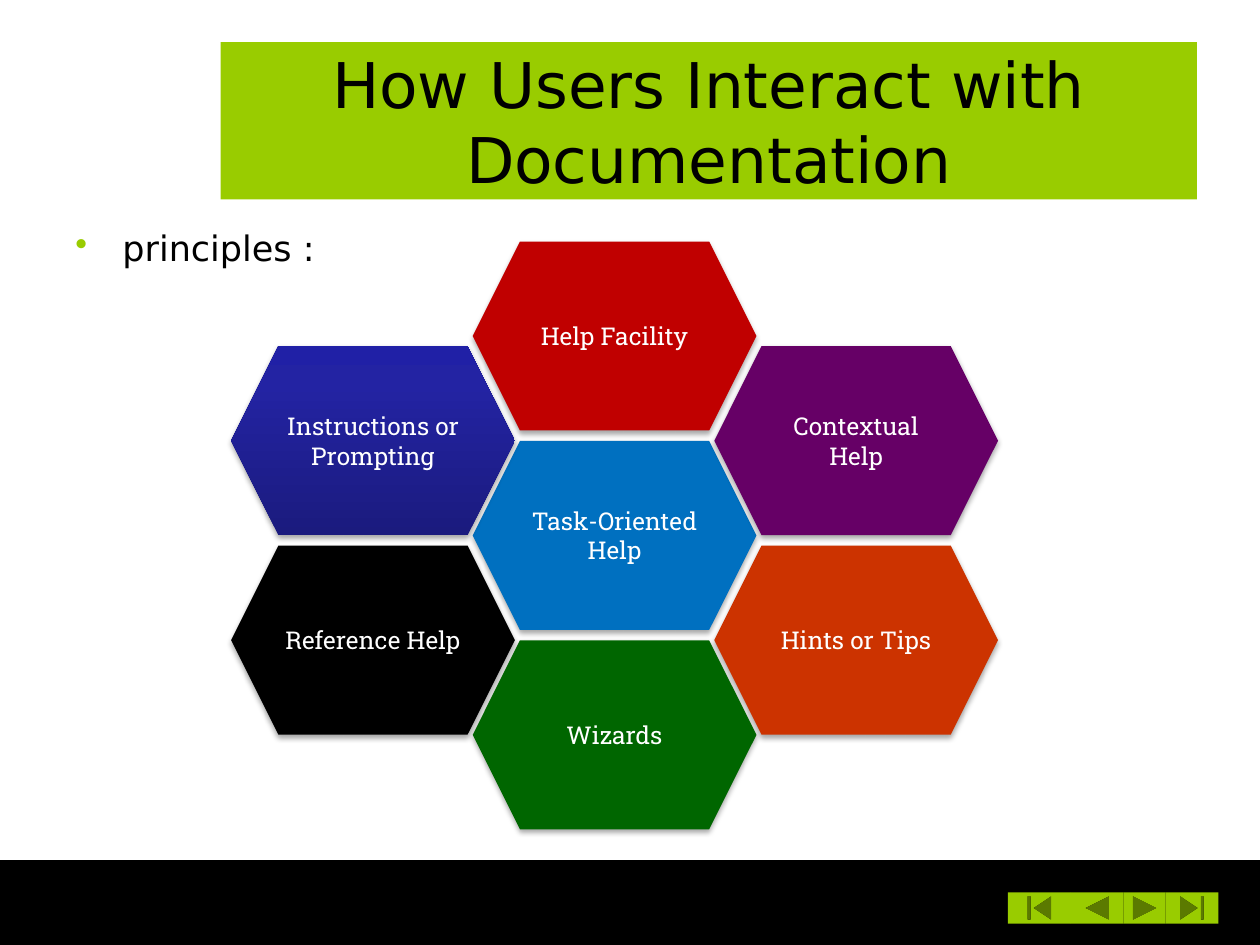
from lxml import etree
from pptx import Presentation, oxml
from pptx.dml.color import RGBColor
from pptx.enum import shapes, text
from pptx.oxml import ns
from pptx.util import Cm, Pt

BLACK = RGBColor(0x00, 0x00, 0x00)
WHITE = RGBColor(0xFF, 0xFF, 0xFF)
LIME = RGBColor(0x99, 0xCC, 0x00)
BLUE = RGBColor(0x00, 0x70, 0xC0)
ORANGE = RGBColor(0xCC, 0x33, 0x00)
PURPLE = RGBColor(0x66, 0x00, 0x66)
GREEN = RGBColor(0x00, 0x66, 0x00)
RED = RGBColor(0xC0, 0x00, 0x00)
INDIGO_STOPS = [
    (0, RGBColor(0x1B, 0x1B, 0x7E)),
    (80, RGBColor(0x23, 0x23, 0xA3)),
    (100, RGBColor(0x20, 0x20, 0xA6)),
]
SHAPE = shapes.MSO_SHAPE

deck = Presentation()
deck.slide_width, deck.slide_height = Cm(25.4), Cm(19.05)
page = deck.slides.add_slide(deck.slide_layouts[6])


def add_block(kind, left, top, width, height, color):
    block = page.shapes.add_shape(kind, Cm(left), Cm(top), Cm(width), Cm(height))
    block.shadow.inherit = False
    block.fill.solid()
    block.fill.fore_color.rgb = color
    block.line.fill.background()
    return block


def write(box, words, font, size, color, align):
    frame = box.text_frame
    frame.word_wrap = True
    para = frame.paragraphs[0]
    para.text = words
    para.alignment = align
    span = para.runs[0]
    span.font.name = font
    span.font.size = Pt(size)
    span.font.color.rgb = color
    return para


# Footer bar with navigation buttons
footer = add_block(SHAPE.RECTANGLE, 0, 17.35, 25.4, 1.7, BLACK)
footer.line.color.rgb = BLACK
footer.line.width = Pt(0.75)
button_left = 20.32
for kind, width in [
    (SHAPE.ACTION_BUTTON_BEGINNING, 1.27),
    (SHAPE.ACTION_BUTTON_BACK_OR_PREVIOUS, 1.06),
    (SHAPE.ACTION_BUTTON_FORWARD_OR_NEXT, 0.85),
    (SHAPE.ACTION_BUTTON_END, 1.06),
]:
    add_block(kind, button_left, 17.99, width, 0.63, LIME)
    button_left += width

# Title and bullet
title = add_block(SHAPE.RECTANGLE, 4.45, 0.85, 19.68, 3.17, LIME)
title.text_frame.vertical_anchor = text.MSO_ANCHOR.MIDDLE
write(title, "How Users Interact with Documentation", "DejaVu Sans", 36, BLACK,
      text.PP_ALIGN.CENTER)

body = page.shapes.add_textbox(Cm(1.27), Cm(4.45), Cm(22.86), Cm(12.57))
para = write(body, "principles :", "DejaVu Sans", 20, BLACK, text.PP_ALIGN.LEFT)
properties = para._p.get_or_add_pPr()
properties.set("marL", str(Cm(0.95)))
properties.set("indent", str(-Cm(0.95)))
bullet_color = etree.SubElement(properties, ns.qn("a:buClr"))
etree.SubElement(bullet_color, ns.qn("a:srgbClr"), val=str(LIME))
etree.SubElement(properties, ns.qn("a:buChar"), char="•")

# Honeycomb: the middle column holds three cells, the side columns two
FIRST_LEFT, COLUMN_STEP, ROW_STEP = 4.66, 4.87, 4.02
COLUMN_TOPS = [6.98, 4.87, 6.98]
SHADOW = (
    f'<a:effectLst {ns.nsdecls("a")}>'
    '<a:outerShdw blurRad="40000" dist="23000" dir="5400000" rotWithShape="0">'
    '<a:srgbClr val="000000"><a:alpha val="35000"/></a:srgbClr>'
    '</a:outerShdw></a:effectLst>'
)
cells = [
    ("Reference Help", 0, 1, BLACK),
    ("Task-Oriented Help", 1, 1, BLUE),
    ("Hints or Tips", 2, 1, ORANGE),
    ("Contextual Help", 2, 0, PURPLE),
    ("Wizards", 1, 2, GREEN),
    ("Help Facility", 1, 0, RED),
    ("Instructions or Prompting", 0, 0, INDIGO_STOPS[0][1]),
]
for words, column, row, color in cells:
    cell = add_block(SHAPE.HEXAGON, FIRST_LEFT + column * COLUMN_STEP,
                     COLUMN_TOPS[column] + row * ROW_STEP, 5.72, 3.81, color)
    cell.text_frame.vertical_anchor = text.MSO_ANCHOR.MIDDLE
    write(cell, words, "Roboto Slab", 14, WHITE, text.PP_ALIGN.CENTER)
    effects = cell._element.spPr.find(ns.qn("a:effectLst"))
    cell._element.spPr.replace(effects, oxml.parse_xml(SHADOW))

# The last cell, Instructions or Prompting, has a gradient
stops = "".join(
    f'<a:gs pos="{percent * 1000}"><a:srgbClr val="{color}"/></a:gs>'
    for percent, color in INDIGO_STOPS
)
gradient = oxml.parse_xml(
    f'<a:gradFill {ns.nsdecls("a")} rotWithShape="1"><a:gsLst>{stops}</a:gsLst>'
    '<a:lin ang="16200000" scaled="0"/></a:gradFill>'
)
cell_properties = cell._element.spPr
cell_properties.replace(cell_properties.find(ns.qn("a:solidFill")), gradient)

deck.save("out.pptx")
